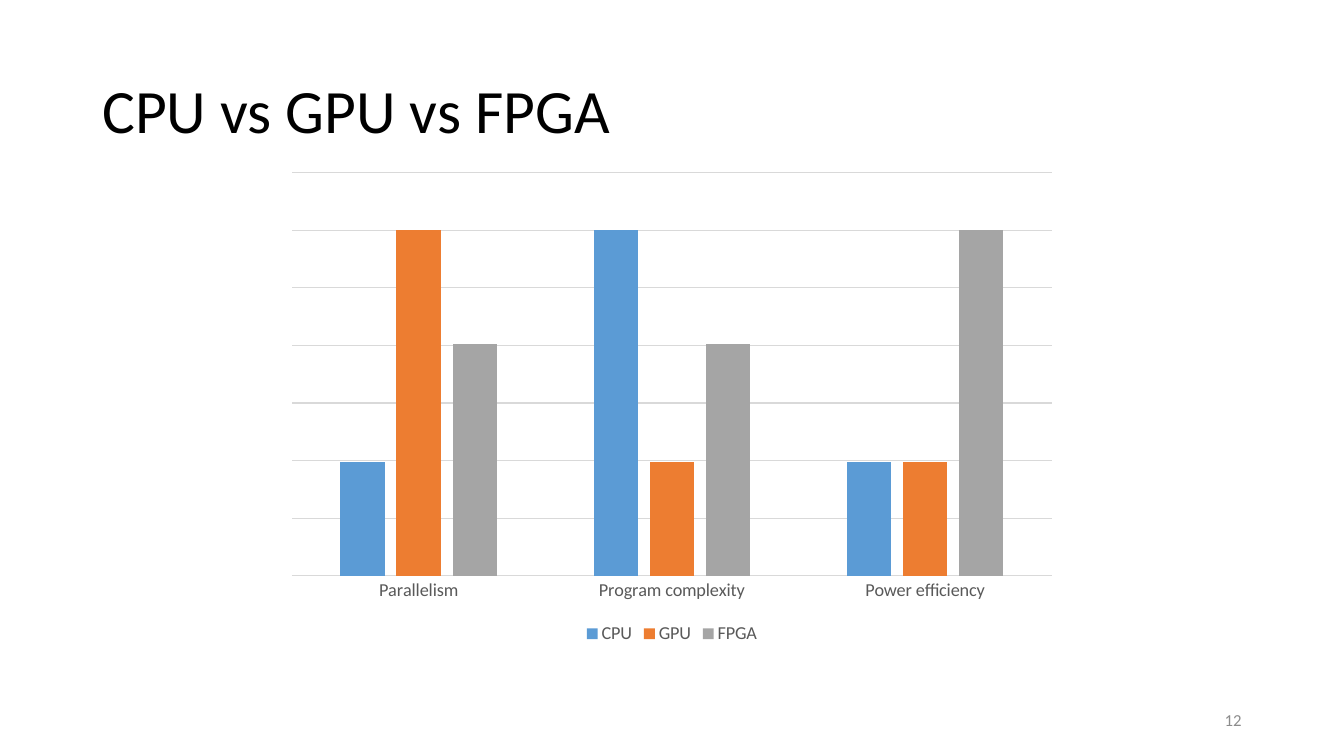
import pptx
import pptx.chart.data
import pptx.dml.color
import pptx.enum.chart
import pptx.enum.text
import pptx.util
from pptx.util import Cm

FONT = "Calibri"
COLORS = {
    "title": "000000",
    "number": "8C8C8C",
    "label": "595959",
    "grid": "D9D9D9",
    "CPU": "5B9BD5",
    "GPU": "ED7D31",
    "FPGA": "A5A5A5",
}
CATEGORIES = ["Parallelism", "Program complexity", "Power efficiency"]
SCORES = {
    "CPU": [33, 100, 33],
    "GPU": [100, 33, 33],
    "FPGA": [67, 67, 100],
}
GRID_STEP = 16.67
GRID_COUNT = 7


def color(name):
    return pptx.dml.color.RGBColor.from_string(COLORS[name])


def style_font(font, size, color_name):
    font.name = FONT
    font.size = pptx.util.Pt(size)
    font.color.rgb = color(color_name)


def style_line(line):
    line.color.rgb = color("grid")
    line.width = pptx.util.Pt(0.75)


def fill_text(shape, text, size, color_name, alignment):
    frame = shape.text_frame
    frame.word_wrap = True
    frame.vertical_anchor = pptx.enum.text.MSO_ANCHOR.MIDDLE
    paragraph = frame.paragraphs[0]
    paragraph.text = text
    paragraph.alignment = alignment
    paragraph.line_spacing = 0.9
    style_font(paragraph.font, size, color_name)


def add_text(slide, box, text, size, color_name, alignment):
    shape = slide.shapes.add_textbox(*box)
    fill_text(shape, text, size, color_name, alignment)


def add_score_chart(slide, box):
    data = pptx.chart.data.CategoryChartData()
    data.categories = CATEGORIES
    for name, values in SCORES.items():
        data.add_series(name, values)
    kind = pptx.enum.chart.XL_CHART_TYPE.COLUMN_CLUSTERED
    chart = slide.shapes.add_chart(kind, *box, data).chart
    chart.has_title = False
    style_font(chart.font, 13, "label")

    plot = chart.plots[0]
    plot.gap_width = 219
    plot.overlap = -27
    plot.vary_by_categories = False
    for series in plot.series:
        series.format.fill.solid()
        series.format.fill.fore_color.rgb = color(series.name)

    category_axis = chart.category_axis
    category_axis.major_tick_mark = pptx.enum.chart.XL_TICK_MARK.NONE
    style_line(category_axis.format.line)
    style_font(category_axis.tick_labels.font, 13, "label")

    value_axis = chart.value_axis
    value_axis.visible = False
    value_axis.minimum_scale = 0
    value_axis.maximum_scale = GRID_STEP * GRID_COUNT
    value_axis.major_unit = GRID_STEP
    value_axis.has_major_gridlines = True
    style_line(value_axis.major_gridlines.format.line)

    chart.has_legend = True
    chart.legend.position = pptx.enum.chart.XL_LEGEND_POSITION.BOTTOM
    chart.legend.include_in_layout = False
    style_font(chart.legend.font, 13, "label")


def main():
    presentation = pptx.Presentation()
    presentation.slide_width = Cm(33.87)
    presentation.slide_height = Cm(19.05)
    slide = presentation.slides.add_slide(presentation.slide_layouts[6])
    align = pptx.enum.text.PP_ALIGN
    add_text(slide, (Cm(2.33), Cm(1.01), Cm(29.21), Cm(3.68)),
             "CPU vs GPU vs FPGA", 44, "title", align.LEFT)
    add_text(slide, (Cm(23.92), Cm(17.66), Cm(7.62), Cm(1.01)),
             "12", 12, "number", align.RIGHT)
    add_score_chart(slide, (Cm(6.96), Cm(4.11), Cm(19.94), Cm(12.24)))
    presentation.save("out.pptx")


if __name__ == "__main__":
    main()
